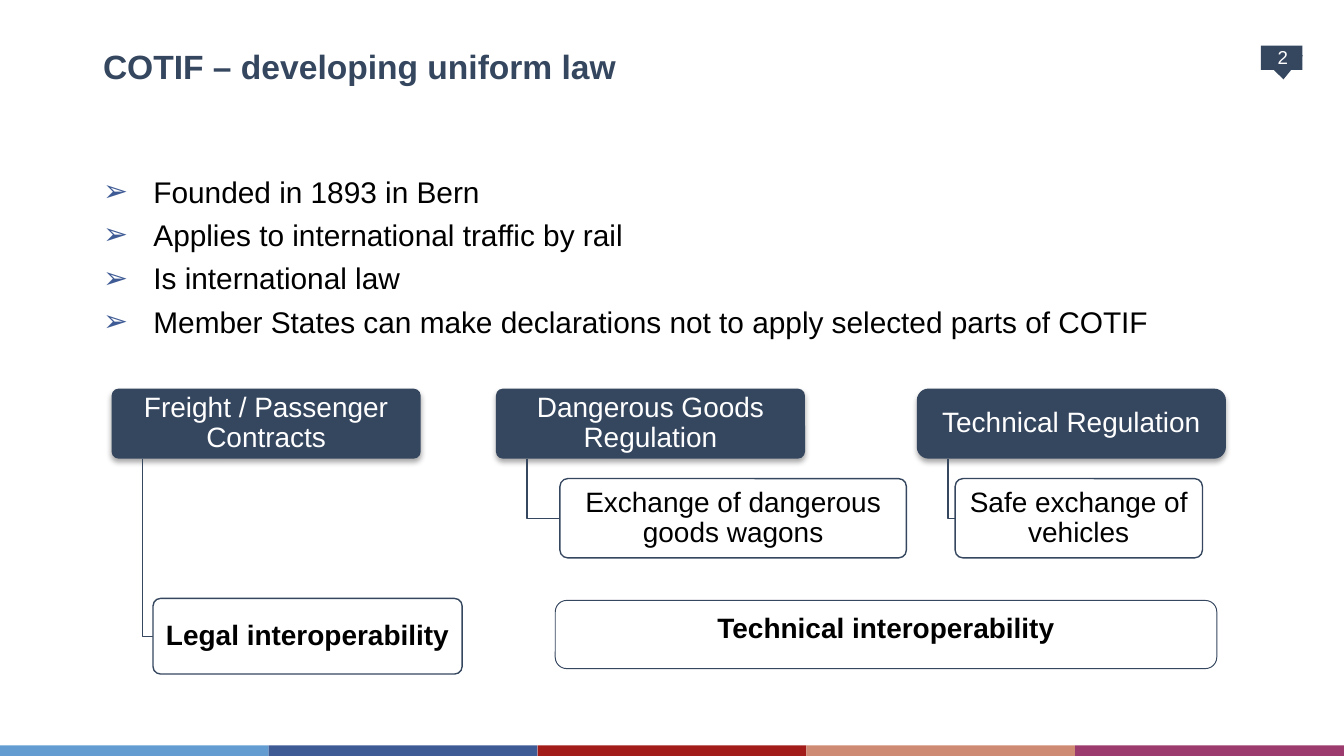
from lxml.etree import SubElement
from pptx import Presentation
from pptx.dml.color import RGBColor
from pptx.enum.shapes import MSO_SHAPE as Shape
from pptx.enum.text import MSO_ANCHOR as Anchor, MSO_AUTO_SIZE as AutoSize, PP_ALIGN as Align
from pptx.oxml.ns import qn
from pptx.util import Pt

COLORS = {
    "navy": "35465F", "white": "FFFFFF", "black": "000000", "sky": "629CD0",
    "blue": "3F5B95", "red": "A21D19", "salmon": "CF8A74", "plum": "9C3B6D",
}
STRIPES = ["sky", "blue", "red", "salmon", "plum"]
BULLETS = [
    "Founded in 1893 in Bern",
    "Applies to international traffic by rail",
    "Is international law",
    "Member States can make declarations not to apply selected parts of COTIF",
]
BRANCHES = [
    {"head": "Freight / Passenger Contracts", "left": 59.8, "adjust": 0.1,
     "child": "Legal interoperability", "box": (82, 320.6, 165.6, 40.5), "bold": True},
    {"head": "Dangerous Goods Regulation", "left": 265.7, "adjust": 0.1,
     "child": "Exchange of dangerous goods wagons", "box": (300, 256.4, 185.6, 42.5), "bold": False},
    {"head": "Technical Regulation", "left": 491.2, "adjust": 0.167,
     "child": "Safe exchange of vehicles", "box": (511.7, 256.4, 132.5, 42.5), "bold": False},
]
HEAD_WIDTH, HEAD_HEIGHT = 165.6, 37.5


def rgb(name):
    return RGBColor.from_string(COLORS[name])


def apply(target, values):
    for name, value in values.items():
        setattr(target, name, value)


def place(shape, box):
    apply(shape, dict(zip(("left", "top", "width", "height"), map(Pt, box))))


def style_font(font, size, color, bold=False):
    apply(font, {"name": "Arial", "size": Pt(size), "bold": bold})
    font.color.rgb = rgb(color)


def write(shape, text, size, color, bold=False, spacing=1.0, **frame_values):
    frame = shape.text_frame
    apply(frame, {"text": text, "word_wrap": True, **frame_values})
    paragraph = frame.paragraphs[0]
    apply(paragraph, {"alignment": Align.CENTER, "line_spacing": spacing})
    style_font(paragraph.runs[0].font, size, color, bold)


def add_box(slide, kind, box, fill, line=None, weight=0.75, adjust=None):
    shape = slide.shapes.add_shape(kind, *map(Pt, box))
    shape.shadow.inherit = False
    shape.fill.solid()
    shape.fill.fore_color.rgb = rgb(fill)
    if line:
        shape.line.color.rgb = rgb(line)
        shape.line.width = Pt(weight)
    else:
        shape.line.fill.background()
    if adjust is not None:
        shape.adjustments[0] = adjust
    return shape


def add_shadow(shape):
    effects = shape._element.spPr.find(qn("a:effectLst"))
    shadow = SubElement(effects, qn("a:outerShdw"), blurRad=str(Pt(3.1)), dist=str(Pt(1.8)),
                        dir="5400000", rotWithShape="0")
    color = SubElement(shadow, qn("a:srgbClr"), val=COLORS["black"])
    SubElement(color, qn("a:alpha"), val="35000")


def add_page_tag(slide, box, number):
    left, top, width, height = box
    add_box(slide, Shape.RECTANGLE, (left, top, width, 13), "navy")
    triangle = add_box(slide, Shape.ISOSCELES_TRIANGLE,
                       (left + 0.7, top + height - 12.2, width, 12.2), "navy")
    triangle.rotation = 176.8
    label = slide.shapes.add_textbox(*map(Pt, (left + 1.4, top - 2.9, 20.9, 21.6)))
    write(label, number, 10, "white", vertical_anchor=Anchor.MIDDLE, margin_left=0,
          margin_right=0, margin_top=0, margin_bottom=Pt(3.6))


def add_stripes(slide, box):
    left, top, width, height = box
    step = width / len(STRIPES)
    for index, color in enumerate(STRIPES):
        add_box(slide, Shape.RECTANGLE, (left + index * step, top, step, height), color)


def fill_title(slide, box, text):
    title = slide.shapes.title
    place(title, box)
    write(title, text, 18, "navy", True, vertical_anchor=Anchor.MIDDLE, auto_size=AutoSize.NONE)
    title.text_frame.paragraphs[0].alignment = Align.LEFT


def fill_bullets(slide, box, items):
    body = slide.placeholders[1]
    place(body, box)
    frame = body.text_frame
    apply(frame, {"text": "\n".join(items), "auto_size": AutoSize.NONE, "word_wrap": True})
    for index, paragraph in enumerate(frame.paragraphs):
        paragraph.space_before = Pt(4 if index else 0)
        style_font(paragraph.runs[0].font, 16, "black")
        properties = paragraph._p.get_or_add_pPr()
        properties.set("marL", str(Pt(27)))
        properties.set("indent", str(-Pt(27)))
        bullet_color = SubElement(properties, qn("a:buClr"))
        SubElement(bullet_color, qn("a:srgbClr"), val=COLORS["blue"])
        SubElement(properties, qn("a:buFont"), typeface="Arial")
        SubElement(properties, qn("a:buChar"), char="➢")


def add_elbow(slide, start, end):
    (x1, y1), (x2, y2) = start, end
    builder = slide.shapes.build_freeform(Pt(x1), Pt(y1))
    builder.add_line_segments([(Pt(x1), Pt(y2)), (Pt(x2), Pt(y2))], close=False)
    elbow = builder.convert_to_shape()
    elbow.shadow.inherit = False
    elbow.fill.background()
    elbow.line.color.rgb = rgb("navy")
    elbow.line.width = Pt(0.75)


def add_branch(slide, box, branch):
    left, top, width, height = box
    frame_values = {"vertical_anchor": Anchor.MIDDLE, "margin_left": Pt(2), "margin_right": Pt(2),
                    "margin_top": Pt(1.4), "margin_bottom": Pt(1.4)}
    head = add_box(slide, Shape.ROUNDED_RECTANGLE, box, "navy", adjust=branch["adjust"])
    add_shadow(head)
    write(head, branch["head"], 15, "white", spacing=0.9, **frame_values)
    child_left, child_top, _, child_height = branch["box"]
    add_elbow(slide, (left + width / 10, top + height), (child_left, child_top + child_height / 2))
    child = add_box(slide, Shape.ROUNDED_RECTANGLE, branch["box"], "white", "navy", adjust=0.1)
    write(child, branch["child"], 15, "black", branch["bold"], 0.9, **frame_values)


def add_summary(slide, box, text):
    summary = add_box(slide, Shape.ROUNDED_RECTANGLE, box, "white", "navy", 0.5)
    write(summary, text, 15, "black", True, vertical_anchor=Anchor.TOP)


def main():
    presentation = Presentation()
    apply(presentation, {"slide_width": Pt(720), "slide_height": Pt(405)})
    slide = presentation.slides.add_slide(presentation.slide_layouts[1])
    add_page_tag(slide, (675.4, 24.5, 22.3, 18), "2")
    add_stripes(slide, (0, 399.4, 720, 5.6))
    fill_bullets(slide, (48, 89.3, 624, 255), BULLETS)
    fill_title(slide, (48, 26.6, 624, 17.3), "COTIF – developing uniform law")
    for branch in BRANCHES:
        add_branch(slide, (branch["left"], 208.2, HEAD_WIDTH, HEAD_HEIGHT), branch)
    add_summary(slide, (297.5, 321.7, 354.4, 36.5), "Technical interoperability")
    presentation.save("out.pptx")


if __name__ == "__main__":
    main()
